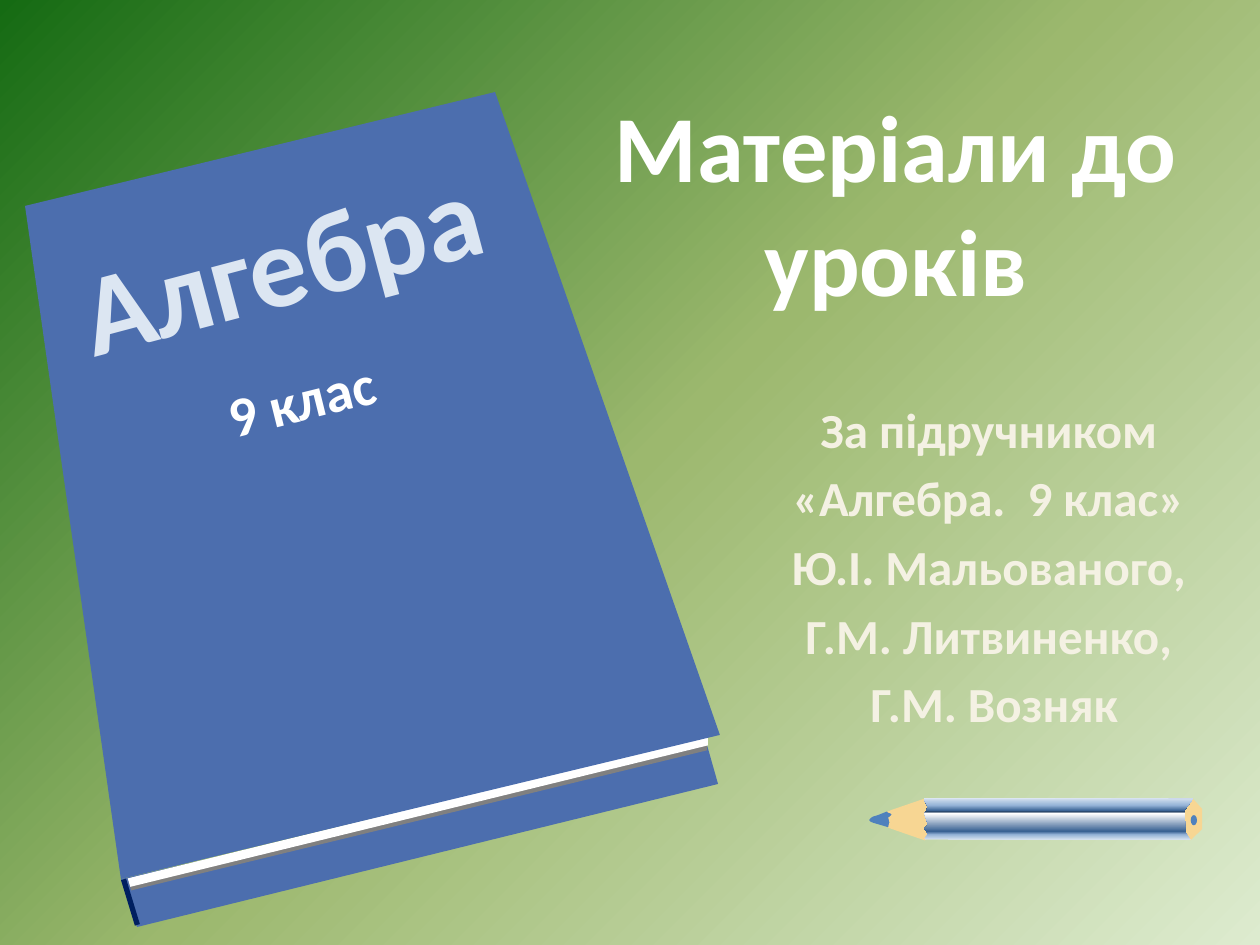
from lxml.etree import SubElement
from pptx import Presentation
from pptx.dml.color import RGBColor
from pptx.enum.shapes import MSO_CONNECTOR, MSO_SHAPE
from pptx.enum.text import MSO_ANCHOR, MSO_AUTO_SIZE, PP_ALIGN
from pptx.oxml.ns import qn
from pptx.util import Pt

FONT = "Calibri"
COLORS = {
    "cover": "4C6EAE", "navy": "002060", "pages": "FFFFFF", "page_shade": "808080",
    "lead": "4F81BD", "wood": "F7D693", "white": "FFFFFF",
    "cover_title": "DCE6F2", "subtitle": "F4F1E3",
}
BACKGROUND_STOPS = [(0, "DDEBCF"), (50, "9CB86E"), (100, "156B13")]
PENCIL_STOPS = [(0, "DCE6F2"), (13, "95B3D7"), (21, "376092"), (63, "FFFFFF"),
                (67, "254061"), (69, "376092"), (82, "95B3D7"), (100, "DCE6F2")]

# Outlines in points: a pair is a corner, six numbers are a Bezier curve
BOOK_PARTS = [
    ("cover", [(69.1, 502.3), (78.3, 529.7), (410.3, 448), (404, 425.7)]),
    ("page_shade", [(73.5, 504), (75, 508.8), (404, 428.8), (404, 424)]),
    ("pages", [(73, 502), (74.5, 506.8), (404.5, 426), (404.5, 420.5)]),
    ("cover", [(14.3, 117.7), (282.9, 52.6), (411.4, 420), (69.1, 502.3)]),
]
PENCIL_TIP = [(510.5, 463.7), (508.3, 462.2, 503.3, 465.8, 499, 466.6),
              (495.4, 468.7, 496.8, 469.4, 499, 470.2), (511.2, 473.8),
              (510.5, 464.4, 512.6, 464.4, 510.5, 463.7)]
PENCIL_WOOD = [(529.9, 455.8), (506.9, 463.7),
               (507.6, 465.1, 511.9, 464.4, 507.6, 467.3),
               (509, 470.9, 507.6, 470.9, 507.6, 473),
               (528.5, 480.2), (535.7, 475.2), (535, 466.6)]
PENCIL_END = [(681.8, 456.5), (686.9, 462.2), (686.9, 473.8),
              (680.4, 480.2), (674.6, 474.5), (674.6, 460.8)]
PENCIL_BODY = [(527.8, 455.8), (527.8, 458.6, 532.1, 460.1, 528.5, 464.4),
               (527.8, 467.3, 532.8, 472.3, 527.8, 473),
               (532.1, 478.1, 528.5, 477.4, 528.5, 479.5),
               (680.4, 480.2), (677.5, 475.9), (676.8, 463), (681.8, 456.5)]


def rgb(name):
    return RGBColor.from_string(COLORS[name])


def flatten(outline, steps=8):
    """Turn corners and curves into plain points."""
    points = []
    for part in outline:
        if len(part) == 2:
            points.append(part)
            continue
        controls = [points[-1], part[:2], part[2:4], part[4:]]
        for step in range(1, steps + 1):
            t = step / steps
            weights = ((1 - t) ** 3, 3 * t * (1 - t) ** 2, 3 * t * t * (1 - t), t ** 3)
            points.append(tuple(sum(weight * control[axis]
                                    for weight, control in zip(weights, controls))
                                for axis in (0, 1)))
    return points


def apply_gradient(fill, element, stops, angle):
    fill.gradient()
    fill.gradient_angle = angle
    stop_list = element.find(".//" + qn("a:gsLst"))
    for stop in list(stop_list):
        stop_list.remove(stop)
    for position, color in stops:
        stop = SubElement(stop_list, qn("a:gs"), pos=str(position * 1000))
        SubElement(stop, qn("a:srgbClr"), val=color)


def finish_shape(shape, color=None):
    shape.shadow.inherit = False
    shape.line.fill.background()
    if color:
        shape.fill.solid()
        shape.fill.fore_color.rgb = rgb(color)


def add_outline(shapes, outline, color=None):
    points = [(Pt(x), Pt(y)) for x, y in flatten(outline)]
    builder = shapes.build_freeform(*points[0])
    builder.add_line_segments(points[1:], close=True)
    shape = builder.convert_to_shape()
    finish_shape(shape, color)
    return shape


def format_runs(paragraph, size, color):
    for run in paragraph.runs:
        run.font.name = FONT
        run.font.size = Pt(size)
        run.font.bold = True
        run.font.color.rgb = rgb(color)


def add_tilted_text(shapes, text, box, rotation, size, color):
    shape = shapes.add_textbox(*map(Pt, box))
    shape.rotation = rotation
    text_frame = shape.text_frame
    text_frame.text = text
    text_frame.word_wrap = True
    text_frame.auto_size = MSO_AUTO_SIZE.SHAPE_TO_FIT_TEXT
    format_runs(text_frame.paragraphs[0], size, color)


def fill_placeholder(shape, lines, box, size, color, anchor, space_before=0):
    shape.left, shape.top, shape.width, shape.height = map(Pt, box)
    text_frame = shape.text_frame
    text_frame.text = "\n".join(lines)
    text_frame.auto_size = MSO_AUTO_SIZE.NONE
    text_frame.vertical_anchor = anchor
    for paragraph in text_frame.paragraphs:
        paragraph.alignment = PP_ALIGN.CENTER
        paragraph.space_before = Pt(space_before)
        format_runs(paragraph, size, color)


def add_book(slide):
    shapes = slide.shapes.add_group_shape().shapes
    for color, outline in BOOK_PARTS:
        add_outline(shapes, outline, color)
    # Spine edge
    spine = shapes.add_connector(MSO_CONNECTOR.STRAIGHT,
                                 Pt(70.6), Pt(502.5), Pt(78.5), Pt(528.5))
    spine.line.color.rgb = rgb("navy")
    spine.line.width = Pt(3)
    SubElement(spine.element.spPr, qn("a:effectLst"))
    add_tilted_text(shapes, "Алгебра", (35.3, 104.4, 255.6, 81.4), 345.1, 66, "cover_title")


def add_pencil(slide):
    shapes = slide.shapes.add_group_shape().shapes
    add_outline(shapes, PENCIL_TIP, "lead")
    add_outline(shapes, PENCIL_WOOD, "wood")
    add_outline(shapes, PENCIL_END, "wood")
    body = add_outline(shapes, PENCIL_BODY)
    apply_gradient(body.fill, body.element, PENCIL_STOPS, 90)
    core = shapes.add_shape(MSO_SHAPE.OVAL, Pt(680.4), Pt(465.8), Pt(3.6), Pt(5.8))
    finish_shape(core, "lead")


def main():
    presentation = Presentation()
    presentation.slide_width, presentation.slide_height = Pt(720), Pt(540)
    slide = presentation.slides.add_slide(presentation.slide_layouts[0])
    apply_gradient(slide.background.fill, slide.element, BACKGROUND_STOPS, 135)

    add_book(slide)

    # Title and textbook authors
    fill_placeholder(slide.shapes.title, ["Матеріали до уроків"],
                     (303.8, 50.4, 416.2, 129.6), 54, "white", MSO_ANCHOR.MIDDLE)
    fill_placeholder(slide.placeholders[1],
                     ["За підручником ", "«Алгебра.  9 клас» ", "Ю.І. Мальованого, ",
                      "Г.М. Литвиненко, ", "Г.М. Возняк"],
                     (416.2, 224.6, 303.8, 208.1), 28, "subtitle", MSO_ANCHOR.TOP, 5.6)

    add_pencil(slide)
    add_tilted_text(slide.shapes, "9 клас", (121.7, 199.4, 146.2, 46.1), 345.9, 32, "white")
    presentation.save("out.pptx")


if __name__ == "__main__":
    main()
